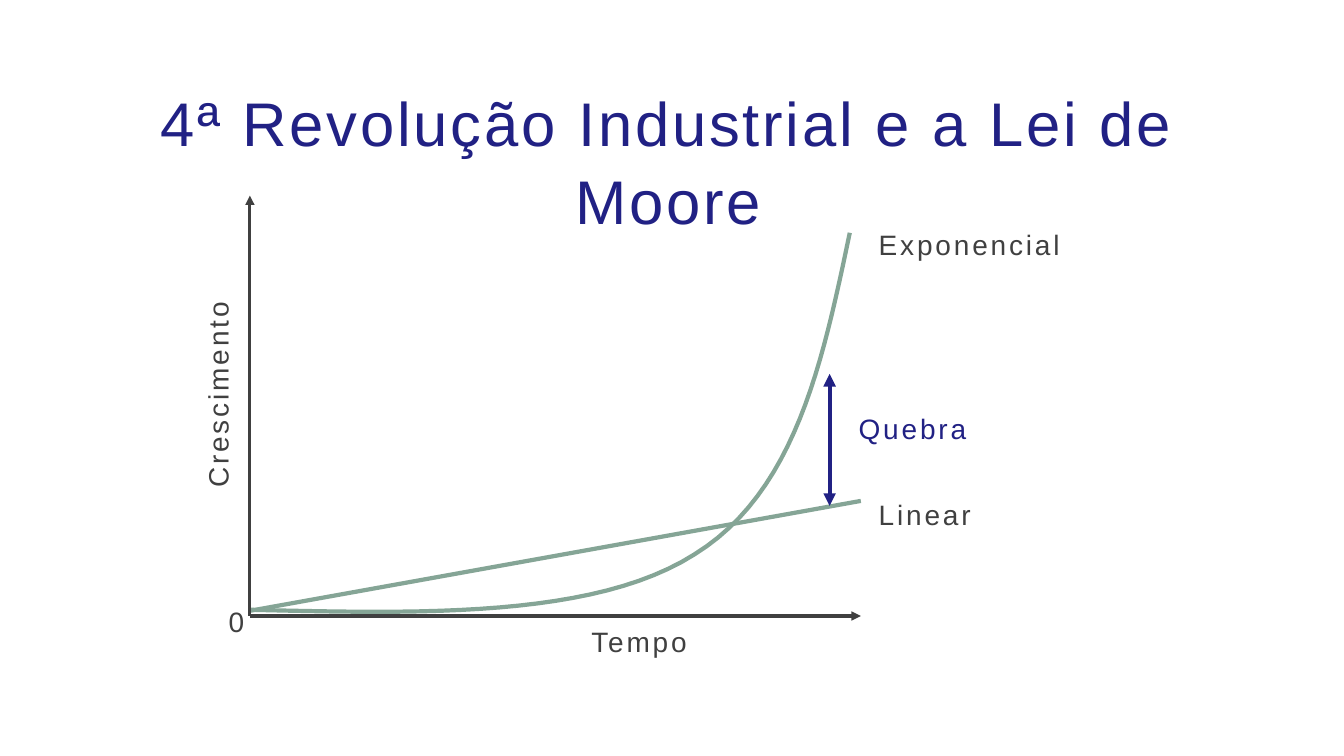
from dataclasses import dataclass
from typing import Optional

from lxml.etree import SubElement
from pptx import Presentation
from pptx.dml.color import RGBColor
from pptx.enum.shapes import MSO_CONNECTOR
from pptx.enum.text import PP_ALIGN
from pptx.oxml.ns import qn
from pptx.util import Pt

NAVY = RGBColor(0x21, 0x21, 0x84)
GRAY = RGBColor(0x40, 0x40, 0x40)
GREEN = RGBColor(0x85, 0xA5, 0x96)
FONT = "Arial"
CURVE_STEPS = 24

Point = tuple[float, float]


@dataclass(frozen=True)
class Label:
    text: str
    left: float
    top: float
    width: float
    height: float = 31.5
    color: RGBColor = GRAY
    size: float = 20
    align: PP_ALIGN = PP_ALIGN.LEFT
    vert: Optional[str] = None
    spacing: float = 1.0


@dataclass(frozen=True)
class Line:
    start: Point
    end: Point
    color: RGBColor
    width: float
    ends: tuple[str, ...] = ()


ORIGIN = (178.5, 440)
LABELS = [
    Label("4ª Revolução Industrial e a Lei de Moore", 77.8, 54.7, 799.2, 69.1,
          NAVY, 44, PP_ALIGN.CENTER, spacing=1.05),
    Label("0", 156.2, 428.4, 28.1),
    Label("Tempo", 348.5, 442.8, 216, align=PP_ALIGN.CENTER),
    Label("Linear", 620.6, 352.1, 164.2),
    Label("Exponencial", 620.6, 159.1, 164.2),
    Label("Crescimento", 139.7, 151.9, 38.9, 260.6,
          align=PP_ALIGN.CENTER, vert="vert270"),
    Label("Quebra", 606.2, 290.2, 164.2, color=NAVY),
]
LINES = [
    Line((178.5, 436.3), (614.9, 357.8), GREEN, 3),
    Line(ORIGIN, (614.9, 440), GRAY, 2.25, ("tailEnd",)),
    Line(ORIGIN, (178.5, 139.7), GRAY, 2.25, ("tailEnd",)),
    Line((592.6, 267.1), (592.6, 361.4), NAVY, 3, ("headEnd", "tailEnd")),
]
EXPONENTIAL = [
    (178.5, 435.6), (301.7, 438.5), (424.8, 441.4), (496.1, 396),
    (568.1, 351.4), (587.5, 259.2), (607, 166.3),
]


def add_label(slide, label: Label) -> None:
    sp = slide.shapes.add_textbox(Pt(label.left), Pt(label.top),
                                  Pt(label.width), Pt(label.height))
    tf = sp.text_frame
    tf.word_wrap = True
    tf.text = label.text
    if label.vert:
        tf._txBody.bodyPr.set("vert", label.vert)
    p = tf.paragraphs[0]
    p.alignment = label.align
    p.line_spacing = label.spacing
    r = p.runs[0]
    r.font.name = FONT
    r.font.size = Pt(label.size)
    r.font.color.rgb = label.color
    r._r.get_or_add_rPr().set("spc", "200")


def add_line(slide, line: Line) -> None:
    cx = slide.shapes.add_connector(
        MSO_CONNECTOR.STRAIGHT, *map(Pt, line.start + line.end))
    cx.line.color.rgb = line.color
    cx.line.width = Pt(line.width)
    ln = cx.line._get_or_add_ln()
    for end in line.ends:
        SubElement(ln, qn(f"a:{end}"), type="triangle")
    SubElement(cx._element.spPr, qn("a:effectLst"))


def bezier_point(control: list[Point], t: float) -> Point:
    u = 1 - t
    weights = (u**3, 3 * u * u * t, 3 * u * t * t, t**3)
    x, y = (sum(w * c for w, c in zip(weights, axis)) for axis in zip(*control))
    return Pt(x), Pt(y)


def add_curve(slide, control: list[Point], color: RGBColor, width: float) -> None:
    points = [bezier_point(control[i:i + 4], step / CURVE_STEPS)
              for i in range(0, len(control) - 1, 3)
              for step in range(1, CURVE_STEPS + 1)]
    builder = slide.shapes.build_freeform(*map(Pt, control[0]))
    builder.add_line_segments(points, close=False)
    sp = builder.convert_to_shape()
    sp.shadow.inherit = False
    sp.fill.background()
    sp.line.color.rgb = color
    sp.line.width = Pt(width)


def main() -> None:
    prs = Presentation()
    prs.slide_width, prs.slide_height = Pt(960), Pt(540)
    s = prs.slides.add_slide(prs.slide_layouts[6])
    for label in LABELS:
        add_label(s, label)
    add_curve(s, EXPONENTIAL, GREEN, 3)
    for line in LINES:
        add_line(s, line)
    prs.save("out.pptx")


if __name__ == "__main__":
    main()
